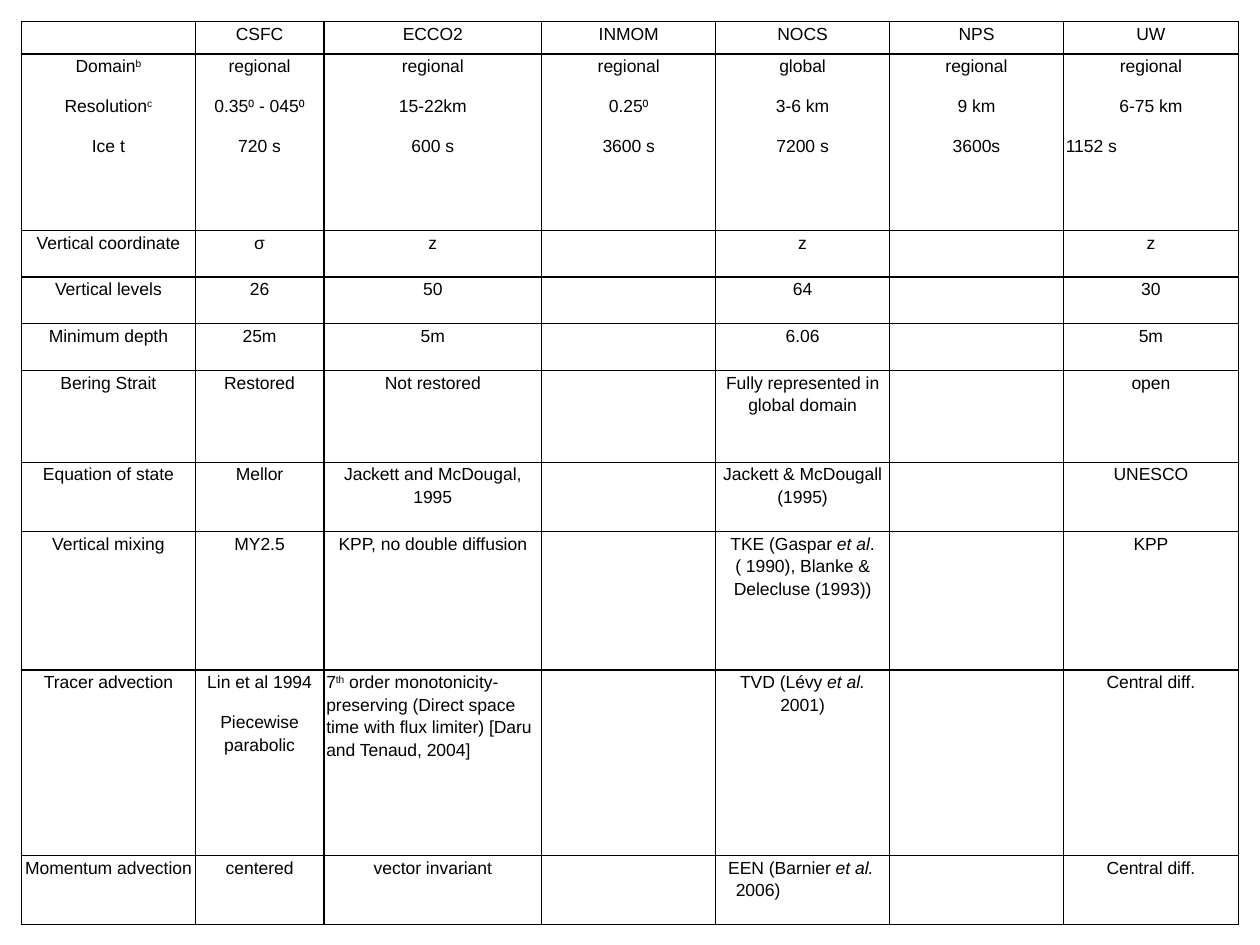
from dataclasses import dataclass

from lxml import etree
from pptx import Presentation
from pptx.dml.color import RGBColor
from pptx.enum.text import PP_ALIGN
from pptx.oxml.ns import qn
from pptx.util import Inches, Pt

CENTER, LEFT = PP_ALIGN.CENTER, PP_ALIGN.LEFT
COLORS = {"ink": "000000", "paper": "FFFFFF"}
FONT_NAME, FONT_SIZE = "Arial", Pt(10)
BORDER_WIDTH = Pt(1)


@dataclass(frozen=True)
class ParagraphLayout:
    align: PP_ALIGN = CENTER
    margin: float = 0
    indent: float = 0
    space_after: int = 10


CENTERED = ParagraphLayout()
# Paragraphs that are not centered, by (row, column, paragraph)
SPECIAL_LAYOUTS = {
    (1, 6, 2): ParagraphLayout(LEFT),
    (8, 2, 0): ParagraphLayout(LEFT, space_after=0),
    (9, 4, 0): ParagraphLayout(LEFT, margin=0.14, indent=-0.06),
}

COLUMN_WIDTHS = [1.38, 1.02, 1.73, 1.38, 1.38, 1.38, 1.39]
ROW_HEIGHTS = [0.26, 1.4, 0.37, 0.37, 0.37, 0.73, 0.55, 1.1, 1.47, 0.55]

# ^text^ is superscript, *text* is italic, a line break starts a paragraph
MODEL_ROWS = [
    ["", "CSFC", "ECCO2", "INMOM", "NOCS", "NPS", "UW"],
    ["Domain^b^\nResolution^c^\nIce t", "regional\n0.35⁰ - 045⁰\n720 s",
     "regional\n15-22km\n600 s", "regional\n0.25⁰\n3600 s",
     "global\n3-6 km\n7200 s", "regional\n9 km\n3600s",
     "regional\n6-75 km\n1152 s"],
    ["Vertical coordinate", "σ", "z", "", "z", "", "z"],
    ["Vertical levels", "26", "50", "", "64", "", "30"],
    ["Minimum depth", "25m", "5m", "", "6.06", "", "5m"],
    ["Bering Strait", "Restored", "Not restored", "",
     "Fully represented in global domain", "", "open"],
    ["Equation of state", "Mellor", "Jackett and McDougal, 1995", "",
     "Jackett & McDougall (1995)", "", "UNESCO"],
    ["Vertical mixing", "MY2.5", "KPP, no double diffusion", "",
     "TKE (Gaspar *et al*.( 1990), Blanke & Delecluse (1993))", "", "KPP"],
    ["Tracer advection", "Lin et al 1994\nPiecewise parabolic",
     "7^th^ order monotonicity-preserving (Direct space time with flux "
     "limiter) [Daru and Tenaud, 2004]", "",
     "TVD (Lévy *et al.* 2001)", "", "Central diff."],
    ["Momentum advection", "centered", "vector invariant", "",
     "EEN (Barnier *et al.* 2006)", "", "Central diff."],
]


def add_span(para, text: str, raised: bool, italic: bool) -> None:
    span = para.add_run()
    span.text = text
    span.font.name = FONT_NAME
    span.font.size = FONT_SIZE
    span.font.color.rgb = RGBColor.from_string(COLORS["ink"])
    if italic:
        span.font.italic = True
    if raised:
        span.font._element.set("baseline", "30000")


def write_paragraph(para, text: str, layout: ParagraphLayout) -> None:
    para.alignment = layout.align
    para.line_spacing = 1.15
    para.space_after = Pt(layout.space_after)
    if layout.margin:
        properties = para._p.get_or_add_pPr()
        properties.set("marL", str(Inches(layout.margin)))
        properties.set("indent", str(Inches(layout.indent)))
    for i, part in enumerate(text.split("^")):
        for j, piece in enumerate(part.split("*")):
            if piece:
                add_span(para, piece, raised=i % 2 == 1, italic=j % 2 == 1)


def draw_borders(cell) -> None:
    properties = cell._tc.get_or_add_tcPr()
    for side in ("lnL", "lnR", "lnT", "lnB"):
        line = etree.SubElement(properties, qn(f"a:{side}"), w=str(BORDER_WIDTH))
        fill = etree.SubElement(line, qn("a:solidFill"))
        etree.SubElement(fill, qn("a:srgbClr"), val=COLORS["ink"])


def fill_cell(cell, row: int, column: int, text: str) -> None:
    draw_borders(cell)
    cell.fill.solid()
    cell.fill.fore_color.rgb = RGBColor.from_string(COLORS["paper"])
    cell.margin_left = cell.margin_right = Inches(0.02)
    cell.margin_top = cell.margin_bottom = 0
    frame = cell.text_frame
    if not text:
        # A small font keeps an empty cell from stretching its row
        etree.SubElement(frame.paragraphs[0]._p, qn("a:endParaRPr"),
                         sz=str(FONT_SIZE.centipoints))
        return
    for index, line in enumerate(text.split("\n")):
        para = frame.add_paragraph() if index else frame.paragraphs[0]
        layout = SPECIAL_LAYOUTS.get((row, column, index), CENTERED)
        write_paragraph(para, line, layout)


def add_model_table(page) -> None:
    table = page.shapes.add_table(
        len(ROW_HEIGHTS), len(COLUMN_WIDTHS), Inches(0.17), Inches(0.17),
        Inches(sum(COLUMN_WIDTHS)), Inches(sum(ROW_HEIGHTS))).table
    table.first_row = table.horz_banding = False
    for column, width in zip(table.columns, COLUMN_WIDTHS):
        column.width = Inches(width)
    for row, height in zip(table.rows, ROW_HEIGHTS):
        row.height = Inches(height)
    for row, texts in enumerate(MODEL_ROWS):
        for column, text in enumerate(texts):
            fill_cell(table.cell(row, column), row, column, text)


def main() -> None:
    deck = Presentation()
    deck.slide_width, deck.slide_height = Inches(10), Inches(7.5)
    page = deck.slides.add_slide(deck.slide_layouts[6])
    add_model_table(page)
    deck.save("out.pptx")


if __name__ == "__main__":
    main()
